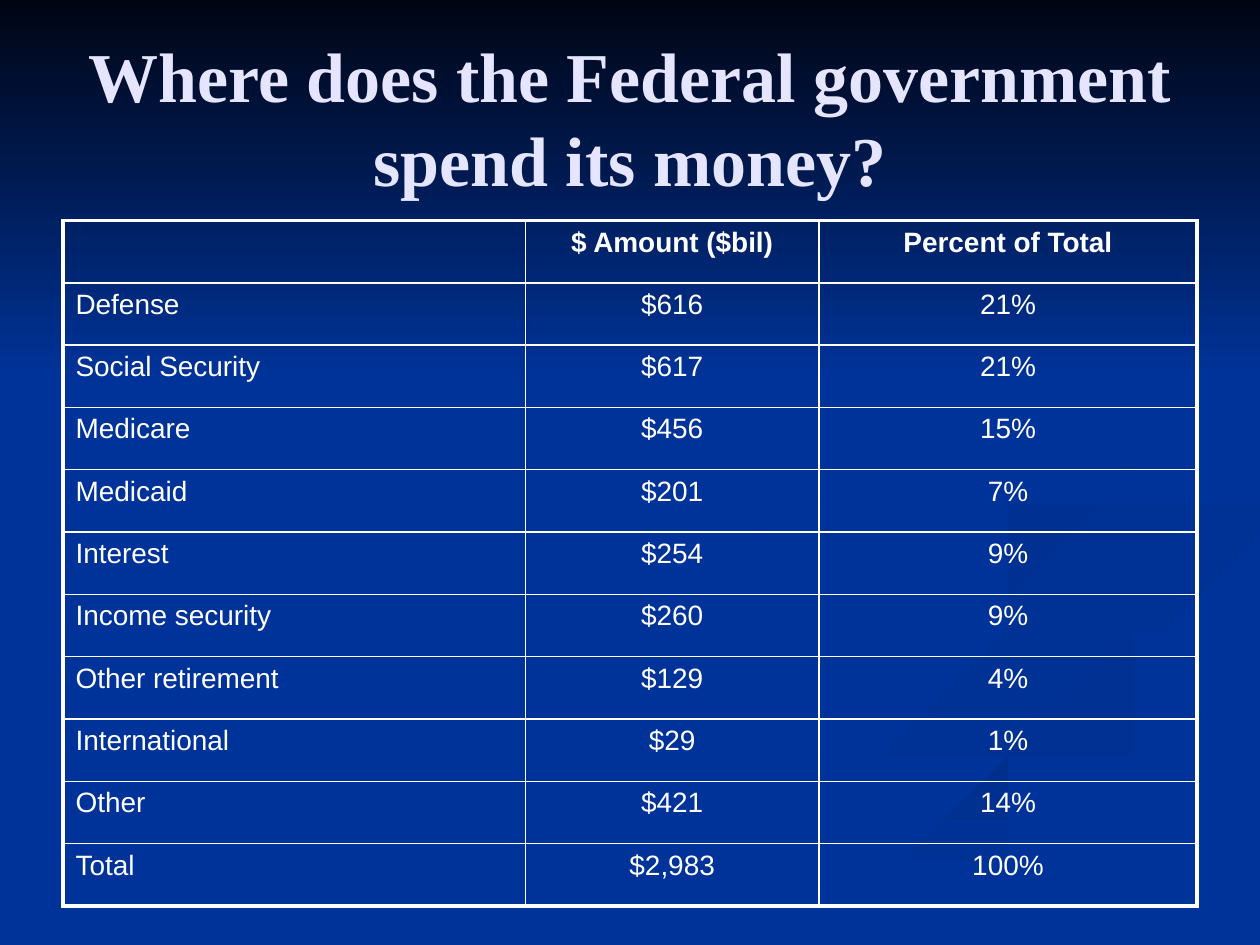
from lxml import etree
from pptx import Presentation
from pptx.dml.color import RGBColor
from pptx.enum.text import MSO_ANCHOR, MSO_AUTO_SIZE, PP_ALIGN
from pptx.oxml.ns import qn
from pptx.util import Inches, Pt

CENTER, LEFT = PP_ALIGN.CENTER, PP_ALIGN.LEFT
MIDDLE, NO_FIT = MSO_ANCHOR.MIDDLE, MSO_AUTO_SIZE.NONE

# Content
COLORS = {"back": "003399", "night": "000514", "title": "E5E5FF", "white": "FFFFFF",
          "shade1": "003193", "shade2": "002F8C", "shade3": "003091", "shade4": "002F8E"}
TITLE = "Where does the Federal government spend its money?"
ROWS = [
    ("", "$ Amount ($bil)", "Percent of Total"),
    ("Defense", "$616", "21%"),
    ("Social Security", "$617", "21%"),
    ("Medicare", "$456", "15%"),
    ("Medicaid", "$201", "7%"),
    ("Interest", "$254", "9%"),
    ("Income security", "$260", "9%"),
    ("Other retirement", "$129", "4%"),
    ("International", "$29", "1%"),
    ("Other", "$421", "14%"),
    ("Total", "$2,983", "100%"),
]
TITLE_FONT = {"name": "Times New Roman", "size": Pt(40), "bold": True}
CELL_FONT = {"name": "Arial", "size": Pt(16)}
COL_WIDTHS = (3.67, 2.33, 3)
TABLE_LEFT, TABLE_TOP, TABLE_HEIGHT = 0.5, 1.75, 5.44
OUTER, INNER = 2.25, 1
CURVE_STEPS = 6

# Backdrop: start colour, end colour, clockwise angle, edges that are each a smooth curve
BACKDROP = [
    ("back", "shade1", 0, [  # lower left ribbon
        [(5.75, 4.59), (5.86, 4.87), (6.97, 5.25), (7.86, 5.66), (6.84, 6.13), (3, 7.49)],
        [(3.61, 7.49), (5.64, 6.65), (7.8, 6.05), (7.81, 5.53), (6.26, 5.02), (5.75, 4.59)]]),
    ("back", "shade1", 45, [  # middle curl
        [(7.24, 4.64), (7.55, 5.05), (8.68, 5.44), (9.17, 5.76), (8.94, 6.05)],
        [(9.43, 5.7), (8.7, 5.3), (7.58, 4.98), (7.24, 4.64)]]),
    ("shade2", "back", 90, [  # lower right sweep
        [(5.03, 7.49), (6.3, 6.93), (7.97, 6.38), (9.98, 5.81)],
        [(9.98, 6.09), (7.85, 6.61), (5.71, 7.49)]]),
    ("back", "back", 0, [  # plain wave between the ribbons
        [(9.99, 3.87), (7.88, 4.22), (7.25, 4.64), (7.75, 5.03), (9.05, 5.4), (9.43, 5.7),
         (8.12, 6.25), (4.77, 7.49)],
        [(5.03, 7.49), (6.96, 6.69), (9.99, 5.81)],
        [(9.99, 5.38), (8.32, 4.98), (7.81, 4.63), (8.35, 4.3), (9.99, 4.02)]]),
    ("shade3", "back", 45, [  # right curl
        [(9.98, 4.02), (8.49, 4.27), (7.81, 4.6), (8.26, 4.96)],
        [(8.26, 4.96), (8.06, 4.68), (8.78, 4.39), (9.98, 4.2)]]),
    ("shade4", "back", 45, [  # upper ribbon
        [(7.62, 2.33), (8.64, 2.91), (8.92, 3.54), (8.25, 4.02), (6.49, 4.36), (5.93, 4.7),
         (6.22, 5)],
        [(6.22, 5), (5.77, 4.62), (6.25, 4.26), (8.18, 3.86), (8.89, 3.35), (7.62, 2.33)]]),
    ("night", "back", 90, [[(0, 0), (10, 0)], [(10, 3.08), (0, 3.08)]]),  # top band
]


def rgb(name):
    return RGBColor.from_string(COLORS[name])


def write(tf, text, align, color, fmt):
    p = tf.paragraphs[0]
    p.alignment = align
    r = p.add_run()
    r.text = text
    r.font.color.rgb = rgb(color)
    for key, value in fmt.items():
        setattr(r.font, key, value)


def smooth(edge):
    """Points of a Catmull-Rom curve through the edge."""
    if len(edge) == 2:
        return edge
    padded = [edge[0], *edge, edge[-1]]
    points = []
    for quad in zip(padded, padded[1:], padded[2:], padded[3:]):
        for step in range(CURVE_STEPS):
            t = step / CURVE_STEPS
            points.append(tuple(
                b + t * (c - a + t * (2 * a - 5 * b + 4 * c - d
                                      + t * (3 * b - 3 * c + d - a))) / 2
                for a, b, c, d in zip(*quad)))
    return points + [edge[-1]]


def add_backdrop(s, start, end, angle, edges):
    points = [point for edge in edges for point in smooth(edge)]
    fb = s.shapes.build_freeform(*points[0], scale=Inches(1))
    fb.add_line_segments(points[1:], close=True)
    sp = fb.convert_to_shape()
    sp.shadow.inherit = False
    sp.line.fill.background()
    if start == end:
        sp.fill.solid()
        sp.fill.fore_color.rgb = rgb(start)
        return
    sp.fill.gradient()
    sp.fill.gradient_angle = -angle % 360  # python-pptx counts anticlockwise
    for stop, name in zip(sp.fill.gradient_stops, (start, end)):
        stop.color.rgb = rgb(name)


def set_borders(cell, widths):
    tcPr = cell._tc.get_or_add_tcPr()
    for i, (side, width) in enumerate(widths.items()):
        ln = etree.Element(qn(f"a:ln{side}"), w=str(Pt(width)))
        fill = etree.SubElement(ln, qn("a:solidFill"))
        etree.SubElement(fill, qn("a:srgbClr"), val=COLORS["white"])
        tcPr.insert(i, ln)


prs = Presentation()
prs.slide_width, prs.slide_height = Inches(10), Inches(7.5)
s = prs.slides.add_slide(prs.slide_layouts[5])
s.background.fill.solid()
s.background.fill.fore_color.rgb = rgb("back")

for part in BACKDROP:
    add_backdrop(s, *part)

# Title, brought in front of the backdrop
title = s.shapes.title
title._element.getparent().append(title._element)
title.left, title.top, title.width, title.height = map(Inches, (0.5, 0.3, 9, 1.25))
tf = title.text_frame
tf.word_wrap, tf.auto_size, tf.vertical_anchor = True, NO_FIT, MIDDLE
write(tf, TITLE, CENTER, "title", TITLE_FONT)

# Spending table
last_row, last_col = len(ROWS) - 1, len(COL_WIDTHS) - 1
table = s.shapes.add_table(len(ROWS), len(COL_WIDTHS), Inches(TABLE_LEFT), Inches(TABLE_TOP),
                           Inches(sum(COL_WIDTHS)), Inches(TABLE_HEIGHT)).table
table.first_row = table.horz_banding = False
for column, width in zip(table.columns, COL_WIDTHS):
    column.width = Inches(width)
for i, row in enumerate(ROWS):
    for j, text in enumerate(row):
        cell = table.cell(i, j)
        cell.fill.background()
        if text:
            write(cell.text_frame, text, CENTER if j else LEFT, "white",
                  {**CELL_FONT, "bold": i == 0})
        set_borders(cell, {"L": INNER if j else OUTER,
                           "R": OUTER if j == last_col else INNER,
                           "T": INNER if i else OUTER,
                           "B": OUTER if i == last_row else INNER})

prs.save("out.pptx")
